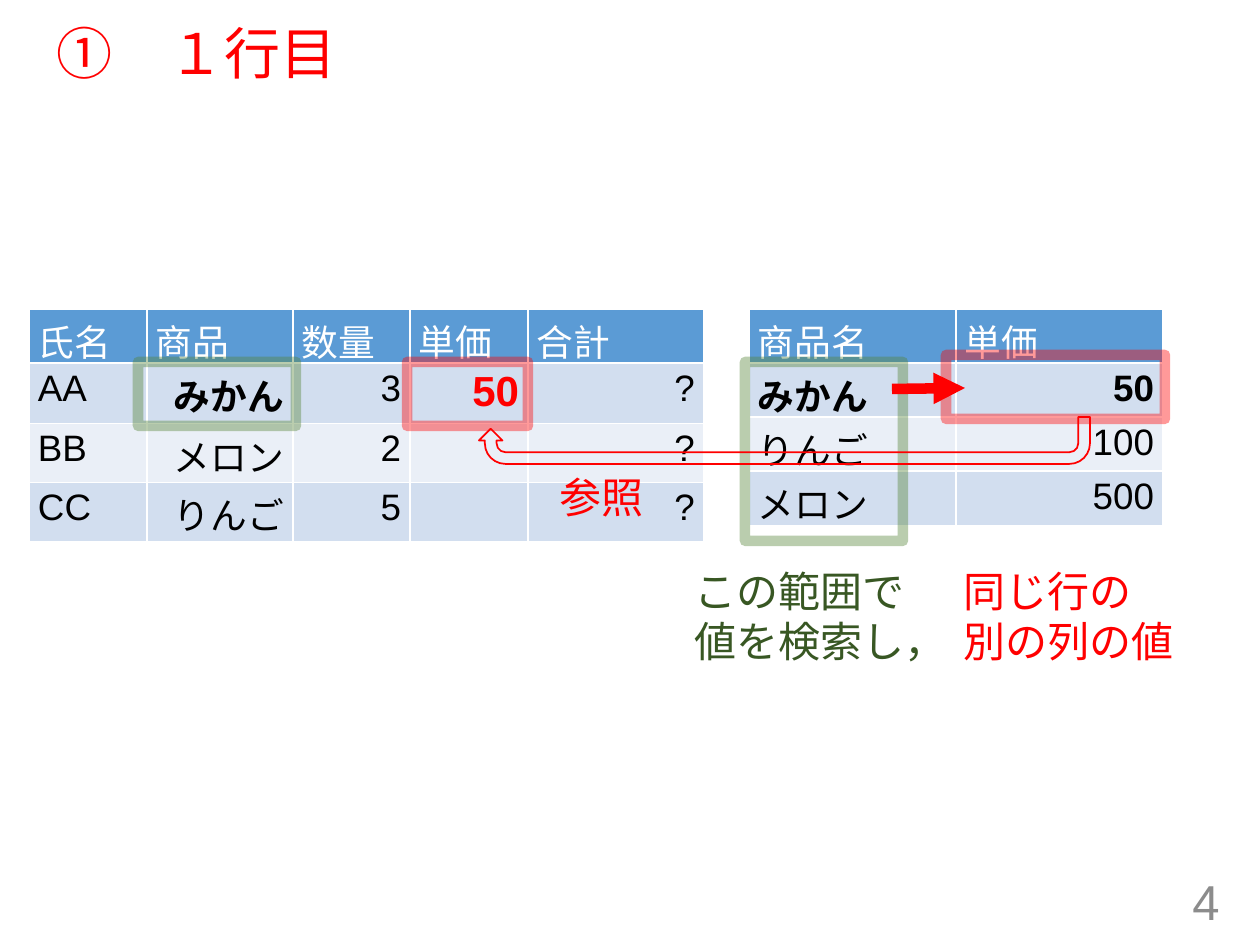
from lxml.etree import SubElement
from pptx import Presentation
from pptx.dml.color import RGBColor
from pptx.enum.shapes import MSO_CONNECTOR, MSO_SHAPE
from pptx.enum.text import MSO_ANCHOR, MSO_AUTO_SIZE, PP_ALIGN
from pptx.oxml.ns import qn
from pptx.util import Emu, Pt

PX = 7257.14  # EMU per px, 126 px to the inch
FONT = "Arial"
COLORS = {
    "red": "FF0000", "green": "548235", "dark_green": "385723",
    "gray": "8C8C8C", "black": "000000", "white": "FFFFFF",
    "header": "5B9BD5", "band_dark": "D2DEEF", "band_light": "EAEFF7",
}

# Content
TITLE = "①\u3000１行目"
TABLES = [
    {"pos": (749, 309), "cols": [207, 207], "rows": [53, 53, 53, 53],
     "right": {1}, "bold": {(1, 0), (1, 1)}, "result": None,
     "data": [["商品名", "単価"],
              ["みかん", "50"],
              ["りんご", "100"],
              ["メロン", "500"]]},
    {"pos": (29, 309), "cols": [118, 146, 117, 118, 176], "rows": [53, 59, 59, 59],
     "right": {1, 2, 3, 4}, "bold": {(1, 1), (1, 3)}, "result": (1, 3),
     "data": [["氏名", "商品", "数量", "単価", "合計"],
              ["AA", "みかん", "3", "50", "?"],
              ["BB", "メロン", "2", "", "?"],
              ["CC", "りんご", "5", "", "?"]]},
]
FRAMES = [  # box, colour
    ((946, 355, 219, 64), "red"),
    ((407, 362, 121, 64), "red"),
    ((138, 362, 158, 64), "green"),
    ((745, 362, 158, 179), "green"),
]
NOTES = [  # box, lines, colour
    ((682, 559, 280, 115), ["この範囲で", "値を検索し，"], "dark_green"),
    ((951, 559, 237, 115), ["同じ行の", "別の列の値"], "red"),
    ((547, 465, 111, 63), ["参照"], "red"),
]
NUMBER_BOX = (949, 876, 283, 50)


def px(*values):
    return [Emu(round(v * PX)) for v in values]


def rgb(name):
    return RGBColor.from_string(COLORS[name])


def style(p, size, color, bold=False, align=PP_ALIGN.LEFT):
    p.alignment = align
    p.font.name, p.font.size, p.font.bold = FONT, Pt(size), bold
    p.font.color.rgb = rgb(color)


def add_text(slide, box, lines, size, color, align=PP_ALIGN.LEFT, wrap=False):
    tf = slide.shapes.add_textbox(*px(*box)).text_frame
    tf.word_wrap = wrap
    tf.text = "\n".join(lines)
    for p in tf.paragraphs:
        style(p, size, color, align=align)
    return tf


def add_outline(slide, kind, box, color, width):
    sp = slide.shapes.add_shape(kind, *px(*box))
    sp.shadow.inherit = False
    sp.fill.background()
    sp.line.color.rgb = rgb(color)
    sp.line.width = Pt(width)
    return sp


def add_grid(slide, spec):
    cols, rows = spec["cols"], spec["rows"]
    table = slide.shapes.add_table(
        len(rows), len(cols), *px(*spec["pos"], sum(cols), sum(rows))).table
    for column, width in zip(table.columns, px(*cols)):
        column.width = width
    for row, height in zip(table.rows, px(*rows)):
        row.height = height
    for r, values in enumerate(spec["data"]):
        fill = "header" if r == 0 else ("band_light", "band_dark")[r % 2]
        for c, value in enumerate(values):
            cell = table.cell(r, c)
            cell.fill.solid()
            cell.fill.fore_color.rgb = rgb(fill)
            cell.margin_left, cell.margin_right = px(9, 9)
            cell.margin_top, cell.margin_bottom = px(5, 5)
            cell.text = value
            is_result = (r, c) == spec["result"]
            color = "white" if r == 0 else "red" if is_result else "black"
            align = PP_ALIGN.RIGHT if r and c in spec["right"] else PP_ALIGN.LEFT
            style(cell.text_frame.paragraphs[0], 24 if is_result else 21,
                  color, (r, c) in spec["bold"], align)


def main():
    prs = Presentation()
    prs.slide_width, prs.slide_height = px(1260, 945)
    slide = prs.slides.add_slide(prs.slide_layouts[5])

    # Title
    title = slide.shapes.title
    title.left, title.top, title.width, title.height = px(44, 24, 1166, 64)
    tf = title.text_frame
    tf.text = TITLE
    tf.auto_size = MSO_AUTO_SIZE.NONE
    tf.vertical_anchor = MSO_ANCHOR.MIDDLE
    style(tf.paragraphs[0], 32, "red")
    tf.paragraphs[0].line_spacing = 0.9

    # Page number
    tf = add_text(slide, NUMBER_BOX, ["4"], 28, "gray", PP_ALIGN.RIGHT, wrap=True)
    tf.vertical_anchor = MSO_ANCHOR.MIDDLE

    # Tables
    for spec in TABLES:
        add_grid(slide, spec)

    # Translucent frames around the cells
    for box, color in FRAMES:
        sp = add_outline(slide, MSO_SHAPE.RECTANGLE, box, color, 6)
        clr = sp.line.fill._xPr.find(".//" + qn("a:srgbClr"))
        SubElement(clr, qn("a:alpha"), val="40000")

    # Arrow from the product to its price
    arrow = slide.shapes.add_connector(MSO_CONNECTOR.STRAIGHT, *px(892, 389, 965, 388))
    arrow.line.color.rgb = rgb("red")
    arrow.line.width = Pt(6)
    SubElement(arrow.line._get_or_add_ln(), qn("a:tailEnd"), type="triangle")
    SubElement(arrow._element.spPr, qn("a:effectLst"))

    # Arrow bringing the price back
    sp = add_outline(slide, MSO_SHAPE.U_TURN_ARROW, (479, 417, 611, 47), "red", 1)
    xfrm = sp._element.spPr.find(qn("a:xfrm"))
    xfrm.set("flipH", "1")
    xfrm.set("flipV", "1")

    # Notes
    for box, lines, color in NOTES:
        add_text(slide, box, lines, 24, color)

    prs.save("out.pptx")


if __name__ == "__main__":
    main()
